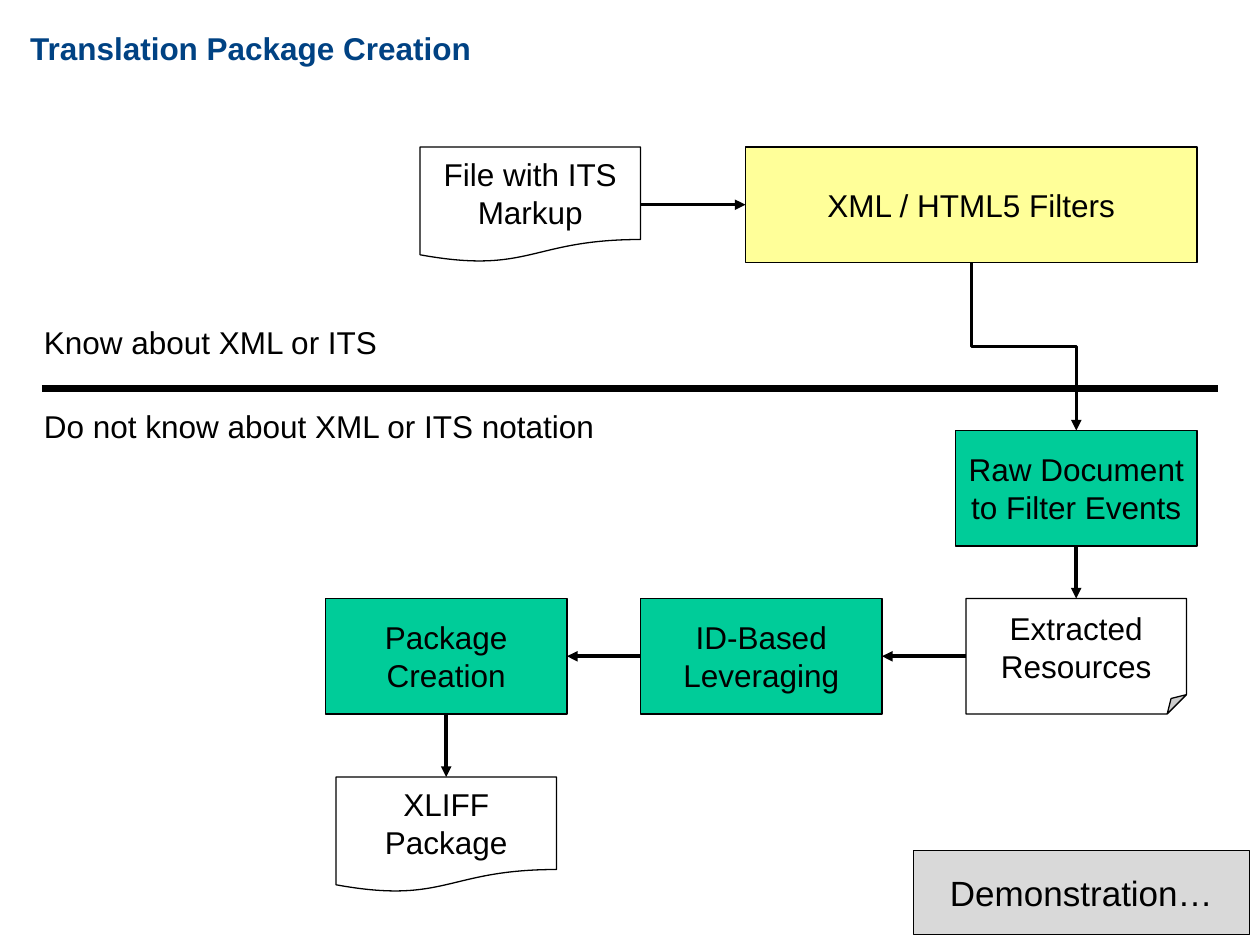
"""Build the Translation Package Creation flow slide."""
from lxml import etree
from pptx import Presentation
from pptx.dml.color import RGBColor
from pptx.enum import shapes, text
from pptx.oxml import ns
from pptx.util import Pt

COLORS = {"black": "000000", "white": "FFFFFF", "title": "004283",
          "filter": "FFFF99", "step": "00CC99", "button": "D9D9D9"}
SHAPE = shapes.MSO_SHAPE
LINE = shapes.MSO_CONNECTOR
STEP_W, DOC_W, BOX_H = 138, 126, 66
ROW_1, ROW_2, ROW_3, ROW_4 = 84, 246, 342, 444


def rgb(name):
    return RGBColor.from_string(COLORS[name])


def write(tf, content, size=18, color="black", bold=False, align=None):
    tf.text = content
    for p in tf.paragraphs:
        p.alignment = align
        for r in p.runs:
            r.font.name = "Arial"
            r.font.size = Pt(size)
            r.font.bold = bold
            r.font.color.rgb = rgb(color)


def add_title(s, content, x, y, w, h):
    sp = s.shapes.title
    sp.left, sp.top, sp.width, sp.height = Pt(x), Pt(y), Pt(w), Pt(h)
    tf = sp.text_frame
    tf.word_wrap = False
    tf.auto_size = text.MSO_AUTO_SIZE.NONE
    tf.vertical_anchor = text.MSO_ANCHOR.TOP
    write(tf, content, color="title", bold=True, align=text.PP_ALIGN.LEFT)


def add_label(s, content, x, y, w, h=29):
    sp = s.shapes.add_textbox(Pt(x), Pt(y), Pt(w), Pt(h))
    sp.text_frame.word_wrap = False
    write(sp.text_frame, content)


def add_box(s, kind, content, x, y, w, h=BOX_H, fill="white", size=18):
    sp = s.shapes.add_shape(kind, Pt(x), Pt(y), Pt(w), Pt(h))
    sp.shadow.inherit = False
    sp.fill.solid()
    sp.fill.fore_color.rgb = rgb(fill)
    sp.line.color.rgb = rgb("black")
    sp.line.width = Pt(0.75)
    tf = sp.text_frame
    tf.word_wrap = True
    tf.margin_left = tf.margin_right = Pt(5)
    tf.vertical_anchor = text.MSO_ANCHOR.MIDDLE
    write(tf, content, size, align=text.PP_ALIGN.CENTER)


def add_line(s, x1, y1, x2, y2, width=2, arrow=True, kind=LINE.STRAIGHT):
    sp = s.shapes.add_connector(kind, Pt(x1), Pt(y1), Pt(x2), Pt(y2))
    sp.line.color.rgb = rgb("black")
    sp.line.width = Pt(width)
    if arrow:
        ln = sp.line._get_or_add_ln()
        etree.SubElement(ln, ns.qn("a:tailEnd"), type="triangle")
    etree.SubElement(sp._element.spPr, ns.qn("a:effectLst"))
    return sp


def add_down_elbow(s, x1, y1, x2, y2):
    cx, cy = (x1 + x2) / 2, (y1 + y2) / 2
    dx, dy = (y2 - y1) / 2, (x2 - x1) / 2
    sp = add_line(s, cx + dx, cy - dy, cx - dx, cy + dy, kind=LINE.ELBOW)
    sp._element.spPr.find(ns.qn("a:xfrm")).set("rot", "16200000")


def main():
    prs = Presentation()
    prs.slide_width, prs.slide_height = Pt(720), Pt(540)
    s = prs.slides.add_slide(prs.slide_layouts[5])

    add_title(s, "Translation Package Creation", 10, 13, 269, 29)
    add_line(s, 24, 222, 696, 222, width=4, arrow=False)
    add_label(s, "Know about XML or ITS", 18, 181, 207)
    add_label(s, "Do not know about XML or ITS notation", 18, 229, 332)

    for content, x, y in (("File with ITS Markup", 240, ROW_1),
                          ("XLIFF Package", 192, ROW_4)):
        add_box(s, SHAPE.FLOWCHART_DOCUMENT, content, x, y, DOC_W)
    add_box(s, SHAPE.FOLDED_CORNER, "Extracted Resources", 552, ROW_3, DOC_W)
    add_box(s, SHAPE.RECTANGLE, "XML / HTML5 Filters", 426, ROW_1, 258,
            fill="filter")
    for content, x, y in (("Raw Document to Filter Events", 546, ROW_2),
                          ("ID-Based\vLeveraging", 366, ROW_3),
                          ("Package Creation", 186, ROW_3)):
        add_box(s, SHAPE.RECTANGLE, content, x, y, STEP_W, fill="step")
    add_box(s, SHAPE.ACTION_BUTTON_CUSTOM, "Demonstration…", 522, 486, 192, 48,
            fill="button", size=20)

    mid_row_3 = ROW_3 + BOX_H / 2
    for ends in ((366, 117, 426, 117),
                 (615, ROW_2 + BOX_H, 615, ROW_3),
                 (552, mid_row_3, 504, mid_row_3),
                 (366, mid_row_3, 324, mid_row_3),
                 (255, ROW_3 + BOX_H, 255, ROW_4)):
        add_line(s, *ends)
    add_down_elbow(s, 555, ROW_1 + BOX_H, 615, ROW_2)

    prs.save("out.pptx")


if __name__ == "__main__":
    main()
